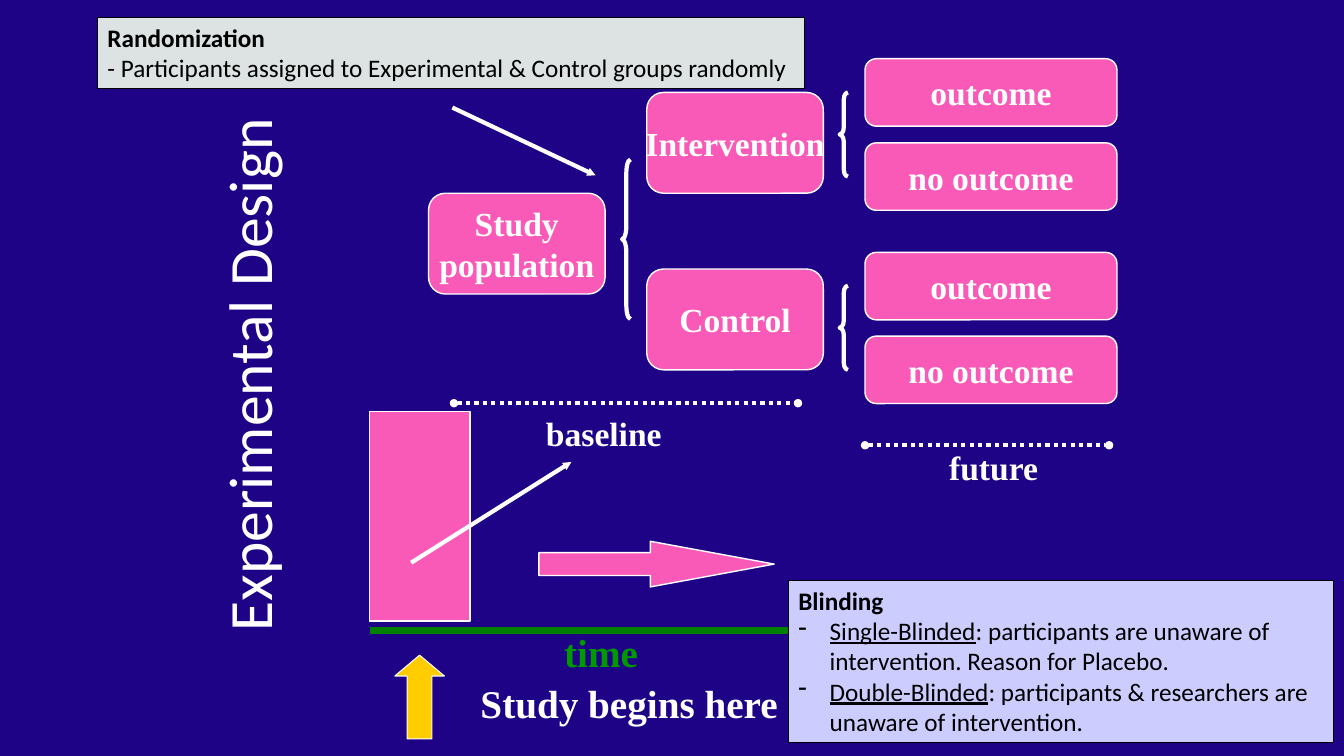
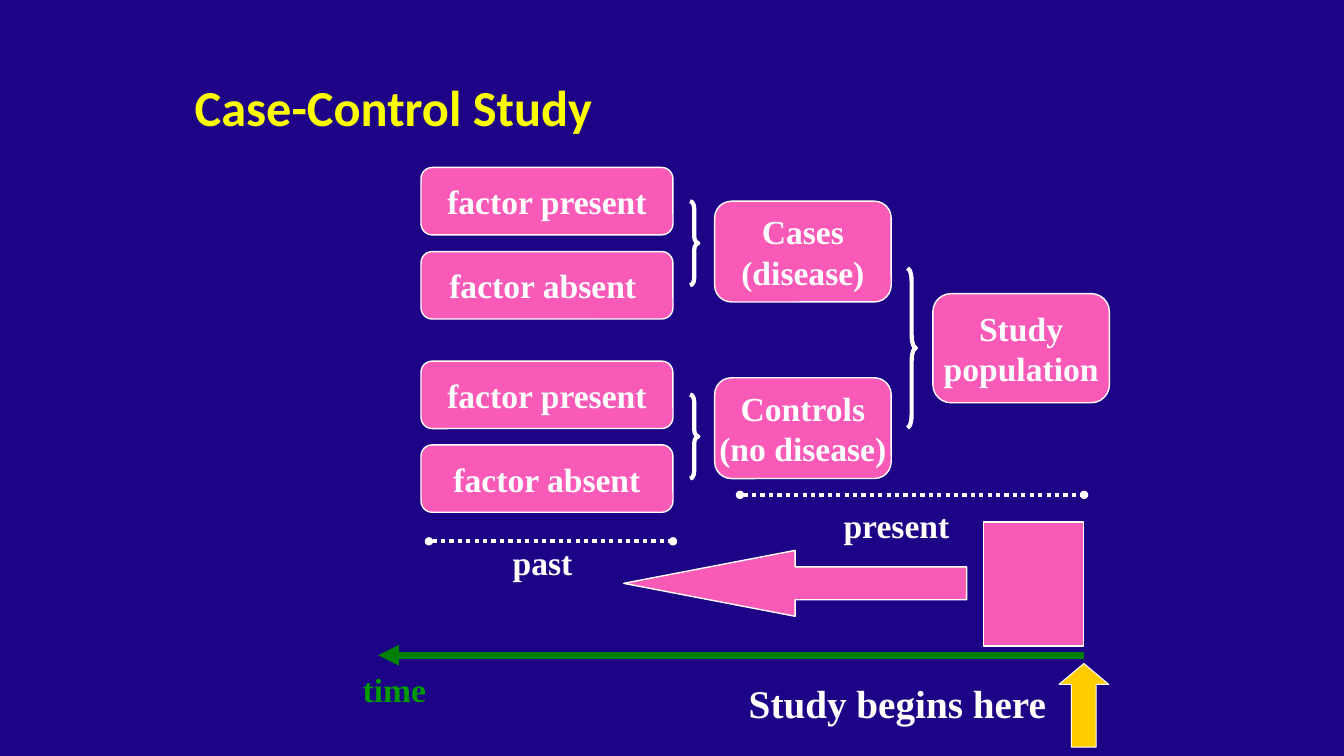
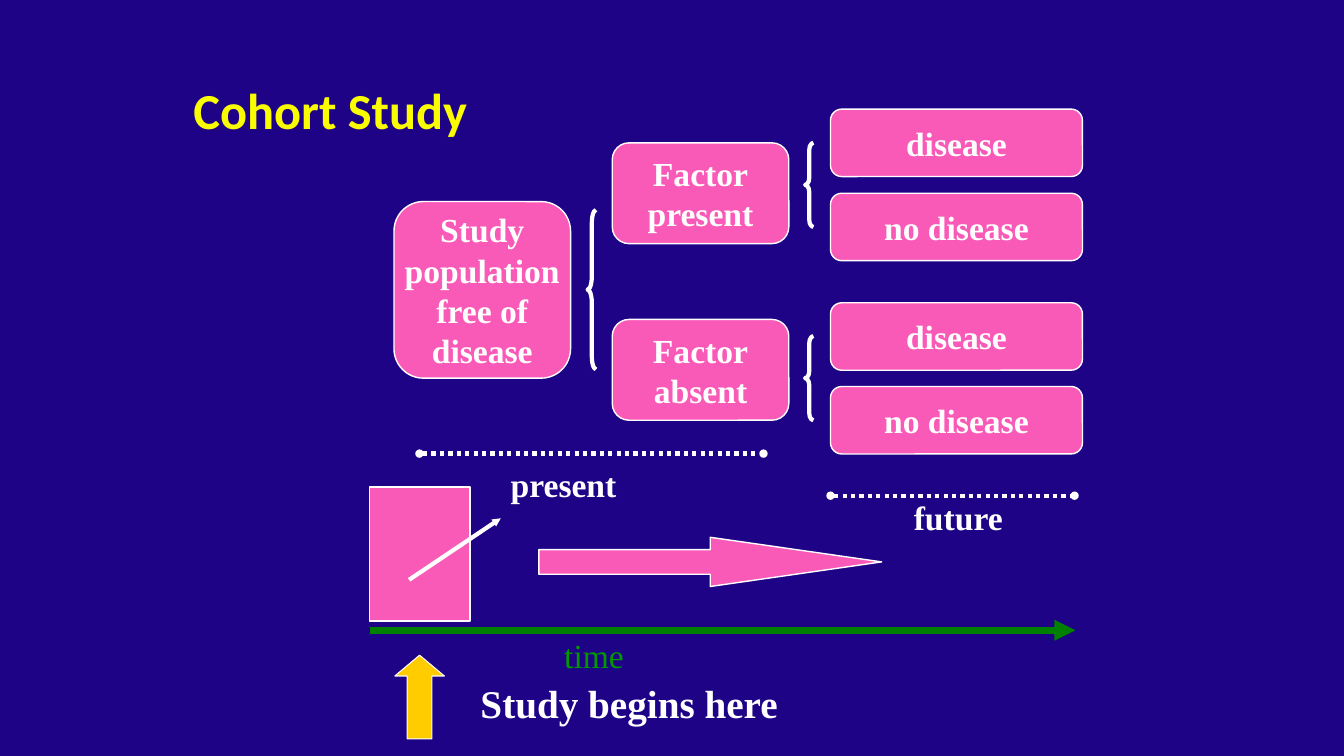
from dataclasses import dataclass

from pptx import Presentation
from pptx import util as u
from pptx.dml.color import RGBColor
from pptx.enum import dml, shapes, text
from pptx.oxml.ns import qn
from lxml import etree

SHAPE = shapes.MSO_SHAPE
ALIGN = text.PP_ALIGN


@dataclass(frozen=True)
class Theme:
    # Colours
    back: str = "1F0387"
    white: str = "FFFFFF"
    black: str = "000000"
    yellow: str = "FAFD00"
    pink: str = "F95AB7"
    gold: str = "FFCC00"
    axis: str = "008000"
    time: str = "009900"
    grey: str = "DDE3E2"
    lilac: str = "CCCCFF"
    # Fonts and type sizes
    sans: str = "Calibri"
    serif: str = "Times New Roman"
    side_title: int = 44
    title: int = 36
    big: int = 28
    body: int = 24
    note: int = 18


T = Theme()


def rgb(value):
    return RGBColor.from_string(value)


class Deck:
    """Holds the style and the current slide; all lengths are in cm."""

    def __init__(self):
        self.prs = Presentation()
        self.prs.slide_width, self.prs.slide_height = u.Cm(33.87), u.Cm(19.05)
        fill = self.prs.slide_master.background.fill
        fill.solid()
        fill.fore_color.rgb = rgb(T.back)
        self.s = None

    # Text
    def run(self, p, words, size, color, font=T.serif, bold=True, underline=None):
        r = p.add_run()
        r.text = words
        f = r.font
        f.name, f.size, f.bold, f.underline = font, u.Pt(size), bold, underline
        f.color.rgb = rgb(color)

    def paragraph(self, tf, first, align=ALIGN.LEFT):
        p = tf.paragraphs[0] if first else tf.add_paragraph()
        p.alignment = align
        return p

    def title(self, words, x, y, w, side=False):
        self.s = self.prs.slides.add_slide(self.prs.slide_layouts[5])
        sp = self.s.shapes.title
        sp.left, sp.top, sp.width, sp.height = map(u.Cm, (x, y, w, 2.34))
        sp.rotation = 270 if side else 0
        tf = sp.text_frame
        tf.auto_size = text.MSO_AUTO_SIZE.NONE
        tf.vertical_anchor = text.MSO_ANCHOR.MIDDLE
        p = self.paragraph(tf, True, ALIGN.CENTER if side else ALIGN.LEFT)
        size, color = (T.side_title, T.white) if side else (T.title, T.yellow)
        self.run(p, words, size, color, T.sans, not side)

    def label(self, words, x, y, w, size=T.body, color=T.white, bold=True):
        sp = self.s.shapes.add_textbox(*map(u.Cm, (x, y, w, size * 0.05 + 0.07)))
        tf = sp.text_frame
        tf.word_wrap = False
        tf.auto_size = text.MSO_AUTO_SIZE.SHAPE_TO_FIT_TEXT
        self.run(self.paragraph(tf, True), words, size, color, bold=bold)

    # Shapes and lines
    def shape(self, kind, x, y, w, h, fill=T.pink, line=T.white, width=1, adj=()):
        sp = self.s.shapes.add_shape(kind, *map(u.Cm, (x, y, w, h)))
        sp.shadow.inherit = False
        if fill:
            sp.fill.solid()
            sp.fill.fore_color.rgb = rgb(fill)
        else:
            sp.fill.background()
        sp.line.color.rgb = rgb(line)
        sp.line.width = u.Pt(width)
        for i, value in enumerate(adj):
            sp.adjustments[i] = value
        return sp

    def box(self, words, x, y, w, h):
        tf = self.shape(SHAPE.ROUNDED_RECTANGLE, x, y, w, h).text_frame
        tf.word_wrap = False
        tf.vertical_anchor = text.MSO_ANCHOR.MIDDLE
        for i, row in enumerate(words.split("\n")):
            self.run(self.paragraph(tf, i == 0, ALIGN.CENTER), row, T.body, T.white)

    def brace(self, x, y, h, mirrored):
        kind = SHAPE.RIGHT_BRACE if mirrored else SHAPE.LEFT_BRACE
        self.shape(kind, x, y, 0.21, h, None, width=3, adj=(h / 12 / 0.21, 0.5))

    def block_arrow(self, x, y, w, h, head, mirrored=False):
        kind = SHAPE.LEFT_ARROW if mirrored else SHAPE.RIGHT_ARROW
        self.shape(kind, x, y, w, h, adj=(0.5, head / h))

    def line(self, x1, y1, x2, y2, color=T.white, width=3, head=None,
             tail="triangle", end_size="sm", dotted=False):
        c = self.s.shapes.add_connector(
            shapes.MSO_CONNECTOR.STRAIGHT, *map(u.Cm, (x1, y1, x2, y2)))
        c.line.color.rgb = rgb(color)
        c.line.width = u.Pt(width)
        if dotted:
            c.line.dash_style = dml.MSO_LINE.ROUND_DOT
        spPr = c._element.spPr
        ln = spPr.find(qn("a:ln"))
        for tag, kind in (("a:headEnd", head), ("a:tailEnd", tail)):
            if kind:
                etree.SubElement(ln, qn(tag), type=kind, w=end_size, len=end_size)
        etree.SubElement(spPr, qn("a:effectLst"))

    def note(self, heading, items, x, y, w, h, fill, bullets=True):
        sp = self.shape(SHAPE.RECTANGLE, x, y, w, h, fill, T.black, 0.75)
        tf = sp.text_frame
        tf.word_wrap = bullets
        tf.auto_size = text.MSO_AUTO_SIZE.SHAPE_TO_FIT_TEXT
        tf.vertical_anchor = text.MSO_ANCHOR.TOP
        self.run(self.paragraph(tf, True), heading, T.note, T.black, T.sans)
        for term, rest in items:
            p = self.paragraph(tf, False)
            if bullets:
                pPr = p._p.get_or_add_pPr()
                pPr.set("marL", str(u.Cm(0.79)))
                pPr.set("indent", str(-u.Cm(0.79)))
                etree.SubElement(pPr, qn("a:buChar"), char="-")
            if term:
                self.run(p, term, T.note, T.black, T.sans, False, True)
            self.run(p, rest, T.note, T.black, T.sans, False, False)

    # Study tree: population, two groups, four leaves, two dotted spans
    def tree(self, edge, top, root, root_y, root_h, groups, leaves, spans,
             mirrored=False):
        def at(offset, w):
            return edge - offset - w if mirrored else edge + offset

        self.box(root, at(0, 4.45), root_y, 4.45, root_h)
        for words, dy in zip(groups, (0.85, 5.3)):
            self.box(words, at(5.5, 4.45), top + dy, 4.45, 2.54)
        for words, dy in zip(leaves, (0, 2.12, 4.88, 6.99)):
            self.box(words, at(11, 6.35), top + dy, 6.35, 1.7)
        for offset, dy, h in ((4.88, 2.54, 4.02), (10.36, 0.85, 2.12),
                              (10.36, 5.72, 2.12)):
            self.brace(at(offset, 0.21), top + dy, h, mirrored)
        for offset, w, y in zip((0.64, 11), (8.67, 6.15), spans):
            x = at(offset, w)
            self.line(x, y, x + w, y, head="oval", tail="oval", dotted=True)

    # Time axis with the starting block and the marker below it
    def timeline(self, start, y, block_h, marker_x, marker_y, begins_x,
                 mirrored=False):
        block_x = start - 2.53 if mirrored else start
        end = start - 17.78 if mirrored else start + 17.78
        self.shape(SHAPE.RECTANGLE, block_x, y - 0.23 - block_h, 2.53, block_h)
        self.line(start, y, end, y, T.axis, 5, end_size="med")
        self.shape(SHAPE.UP_ARROW, marker_x, marker_y, 1.25, 2.11, T.gold,
                   width=0.75, adj=(0.5, 0.42))
        self.label("Study begins here", begins_x, 17, 8.05, T.big)


def main():
    d = Deck()

    # Experimental design
    d.title("Experimental Design", -1.32, 8.28, 15.11, side=True)
    d.timeline(9.32, 15.88, 5.28, 9.95, 16.51, 11.86)
    d.label("time", 13.97, 15.72, 2.39, T.big, T.time)
    d.tree(10.8, 1.48, "Study\npopulation", 4.87, 2.54,
           ("Intervention", "Control"), ("outcome", "no outcome") * 2,
           (10.16, 11.22))
    d.block_arrow(13.58, 13.64, 5.93, 1.15, 3.12)
    d.label("baseline", 13.51, 10.29, 3.43)
    d.label("future", 23.67, 11.13, 2.77)
    d.line(10.36, 14.18, 14.4, 11.64)
    d.note("Randomization",
           [("", "- Participants assigned to Experimental & Control groups randomly")],
           2.46, 0.43, 17.81, 1.8, T.grey, bullets=False)
    d.line(11.4, 2.71, 15.01, 4.42)
    d.note("Blinding", [
        ("Single-Blinded",
         ": participants are unaware of intervention. Reason for Placebo."),
        ("Double-Blinded",
         ": participants & researchers are unaware of intervention."),
    ], 19.87, 14.62, 13.74, 4.1, T.lilac)

    # Case-control study
    d.title("Case-Control Study", 4.65, 1.52, 13.77)
    d.tree(27.96, 4.22, "Study\npopulation", 7.4, 2.75,
           ("Cases\n(disease)", "Controls\n(no disease)"),
           ("factor present", "factor absent ", "factor present", "factor absent"),
           (12.47, 13.64), mirrored=True)
    d.label("present", 21.01, 12.6, 3.2)
    d.label("past", 12.67, 13.54, 2.03)
    d.block_arrow(15.72, 13.87, 8.64, 1.66, 4.32, mirrored=True)
    d.timeline(27.31, 16.51, 3.13, 26.69, 16.72, 18.62, mirrored=True)
    d.label("time", 8.89, 16.74, 2.11, color=T.time)

    # Cohort study
    d.title("Cohort Study", 4.62, 1.58, 11.86)
    d.timeline(9.32, 15.88, 3.38, 9.95, 16.51, 11.86)
    d.label("time", 13.97, 15.88, 2.01, color=T.time, bold=False)
    d.tree(9.93, 2.75, "Study\npopulation\nfree of\ndisease", 5.08, 4.45,
           ("Factor\npresent", "Factor\nabsent"), ("disease", "no disease") * 2,
           (11.43, 12.49))
    d.block_arrow(13.58, 13.54, 8.64, 1.24, 4.32)
    d.label("present", 12.62, 11.56, 3.2)
    d.label("future", 22.78, 12.4, 2.77)
    d.line(10.31, 14.61, 12.62, 13.06)

    d.prs.save("out.pptx")


if __name__ == "__main__":
    main()
